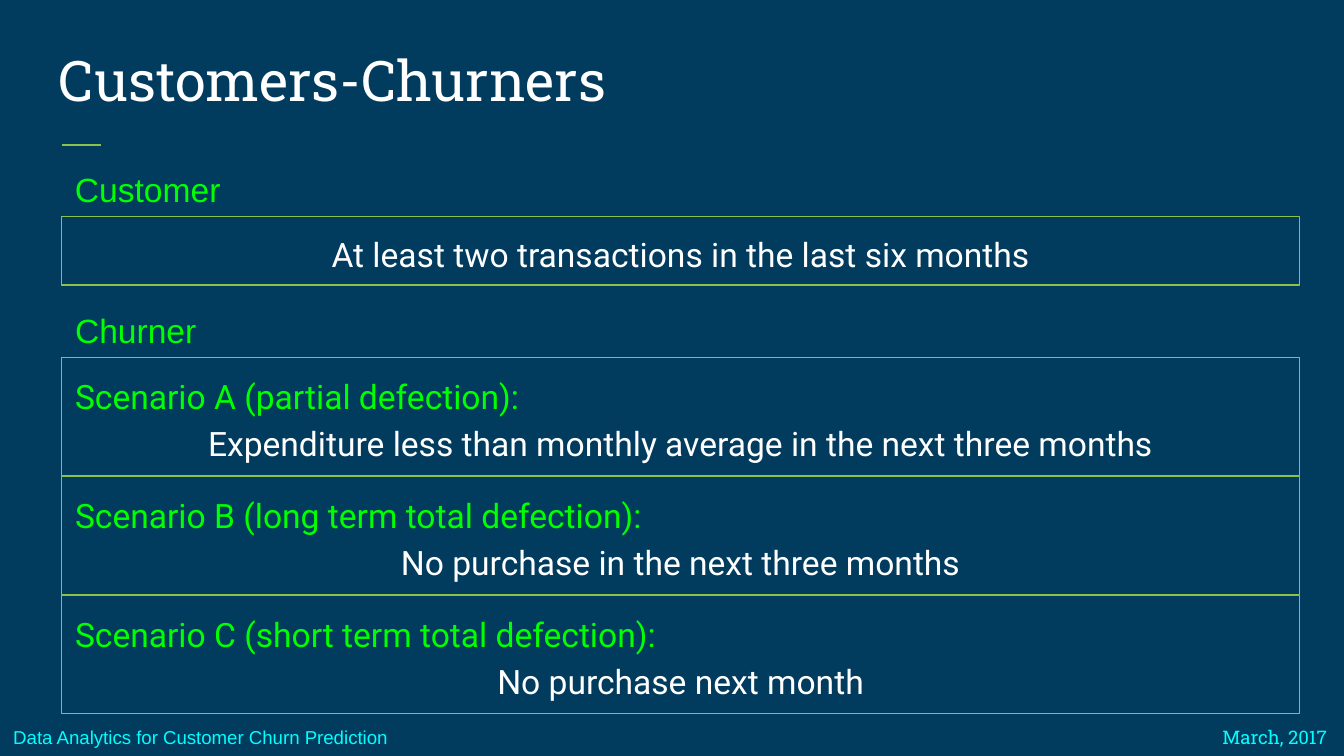
import pptx
import pptx.util
import pptx.dml.color
import pptx.enum.shapes
import pptx.enum.text
import pptx.oxml.ns
import lxml.etree

Inches = pptx.util.Inches
Pt = pptx.util.Pt
RGB = pptx.dml.color.RGBColor
ALIGN = pptx.enum.text.PP_ALIGN
ANCHOR = pptx.enum.text.MSO_ANCHOR

NAVY = RGB(0x01, 0x3B, 0x5E)
WHITE = RGB(0xFF, 0xFF, 0xFF)
LEAF = RGB(0x8B, 0xC3, 0x4A)
LIME = RGB(0x00, 0xFF, 0x00)
CYAN = RGB(0x00, 0xFF, 0xFF)

LEFT = 0.46
WIDTH = 9.21
LABEL_H = 0.4
CUSTOMER_TOP = 1.61
CHURNER_TOP = 2.66
LAST_TOP = 4.43
SCENARIOS = [
    ("Scenario A (partial defection):",
     "Expenditure less than monthly average in the next three months"),
    ("Scenario B (long term total defection):",
     "No purchase in the next three months"),
    ("Scenario C (short term total defection):",
     "No purchase next month"),
]
STEP = (LAST_TOP - CHURNER_TOP) / (len(SCENARIOS) - 1)


def write(para, text, size=18, font="Roboto", color=WHITE,
          align=ALIGN.LEFT, spacing=None):
    para.alignment = align
    if spacing:
        para.line_spacing = spacing
    run = para.add_run()
    run.text = text
    run.font.size = Pt(size)
    run.font.name = font
    run.font.color.rgb = color


def set_frame(frame, anchor, pad=0.1, wrap=True):
    frame.word_wrap = wrap
    frame.vertical_anchor = anchor
    frame.margin_left = frame.margin_right = Inches(0.1)
    frame.margin_top = frame.margin_bottom = Inches(pad)


def add_text(slide, text, left, top, width, height,
             anchor=ANCHOR.MIDDLE, pad=0.1, wrap=True, **style):
    box = slide.shapes.add_textbox(
        Inches(left), Inches(top), Inches(width), Inches(height))
    set_frame(box.text_frame, anchor, pad, wrap)
    write(box.text_frame.paragraphs[0], text, **style)
    return box


def add_label(slide, text, top, width):
    """Put a heading directly above the panel that starts at top."""
    box = add_text(slide, text, LEFT, top - LABEL_H, width, LABEL_H,
                   anchor=ANCHOR.TOP, pad=0.05, wrap=False,
                   font="Arial", color=LIME)
    box.text_frame.auto_size = pptx.enum.text.MSO_AUTO_SIZE.SHAPE_TO_FIT_TEXT


def add_panel(slide, top, height, body, head=None):
    """Outline a box with centred body text below an optional green head."""
    panel = slide.shapes.add_shape(
        pptx.enum.shapes.MSO_SHAPE.RECTANGLE,
        Inches(LEFT), Inches(top), Inches(WIDTH), Inches(height))
    panel.shadow.inherit = False
    panel.fill.background()
    panel.line.color.rgb = LEAF
    panel.line.width = Pt(0.75)
    frame = panel.text_frame
    set_frame(frame, ANCHOR.MIDDLE)
    para = frame.paragraphs[0]
    if head:
        write(para, head, color=LIME, spacing=1.15)
        para = frame.add_paragraph()
    write(para, body, align=ALIGN.CENTER, spacing=1.15)


def add_rule(slide, left, right, y):
    rule = slide.shapes.add_connector(
        pptx.enum.shapes.MSO_CONNECTOR.STRAIGHT,
        Inches(left), Inches(y), Inches(right), Inches(y))
    rule.line.color.rgb = LEAF
    rule.line.width = Pt(0.75)
    props = rule.element.spPr
    lxml.etree.SubElement(props, pptx.oxml.ns.qn("a:effectLst"))


def main():
    deck = pptx.Presentation()
    deck.slide_width = Inches(10)
    deck.slide_height = Inches(10 * 9 / 16)
    slide = deck.slides.add_slide(deck.slide_layouts[6])
    fill = slide.background.fill
    fill.solid()
    fill.fore_color.rgb = NAVY

    add_text(slide, "Customers-Churners", 0.34, 0.14, 9.32, 0.8,
             anchor=ANCHOR.BOTTOM, size=30, font="Roboto Slab")
    add_rule(slide, LEFT, 0.75, 1.08)

    add_label(slide, "Customer", CUSTOMER_TOP, 1.3)
    add_panel(slide, CUSTOMER_TOP, 0.51,
              "At least two transactions in the last six months")

    add_label(slide, "Churner", CHURNER_TOP, 1.11)
    for i, (head, body) in enumerate(SCENARIOS):
        add_panel(slide, CHURNER_TOP + i * STEP, 0.88, body, head)

    add_text(slide, "Data Analytics for Customer Churn Prediction",
             0, 5.35, 3.02, 0.27, size=10, font="Arial", color=CYAN)
    add_text(slide, "March, 2017", 6.95, 5.35, 3.02, 0.27,
             size=10, font="Roboto Slab", color=CYAN, align=ALIGN.RIGHT)

    deck.save("out.pptx")


if __name__ == "__main__":
    main()
